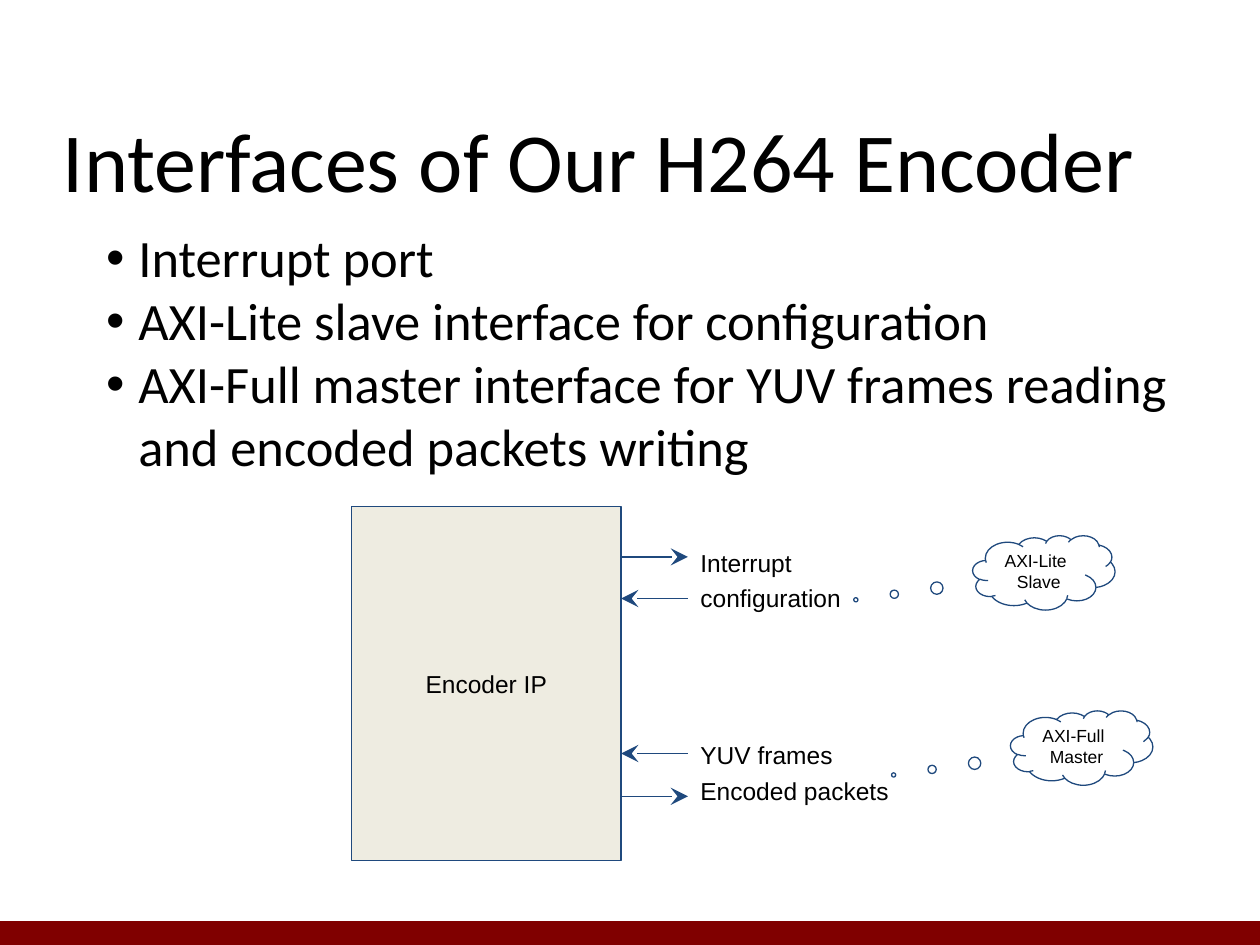
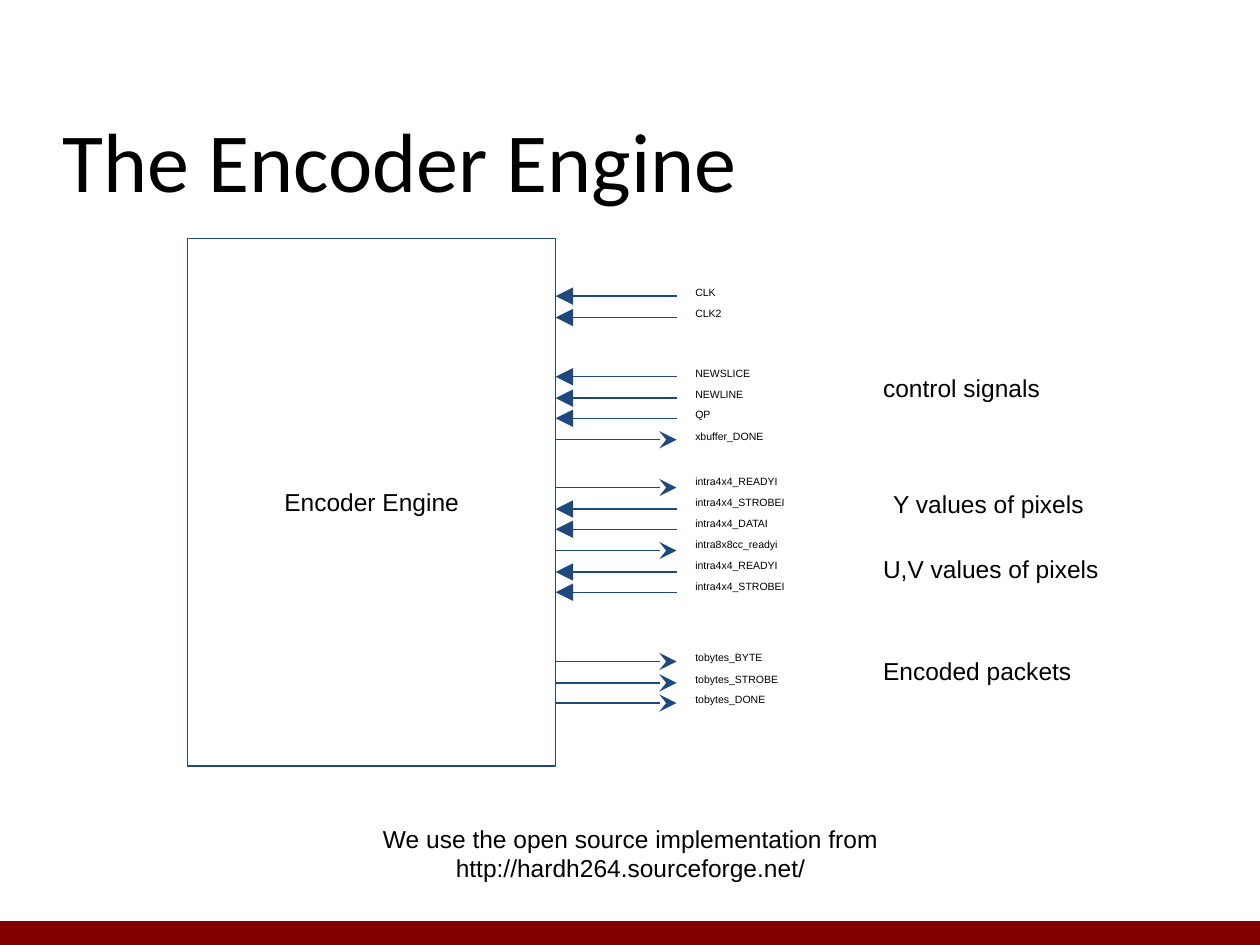
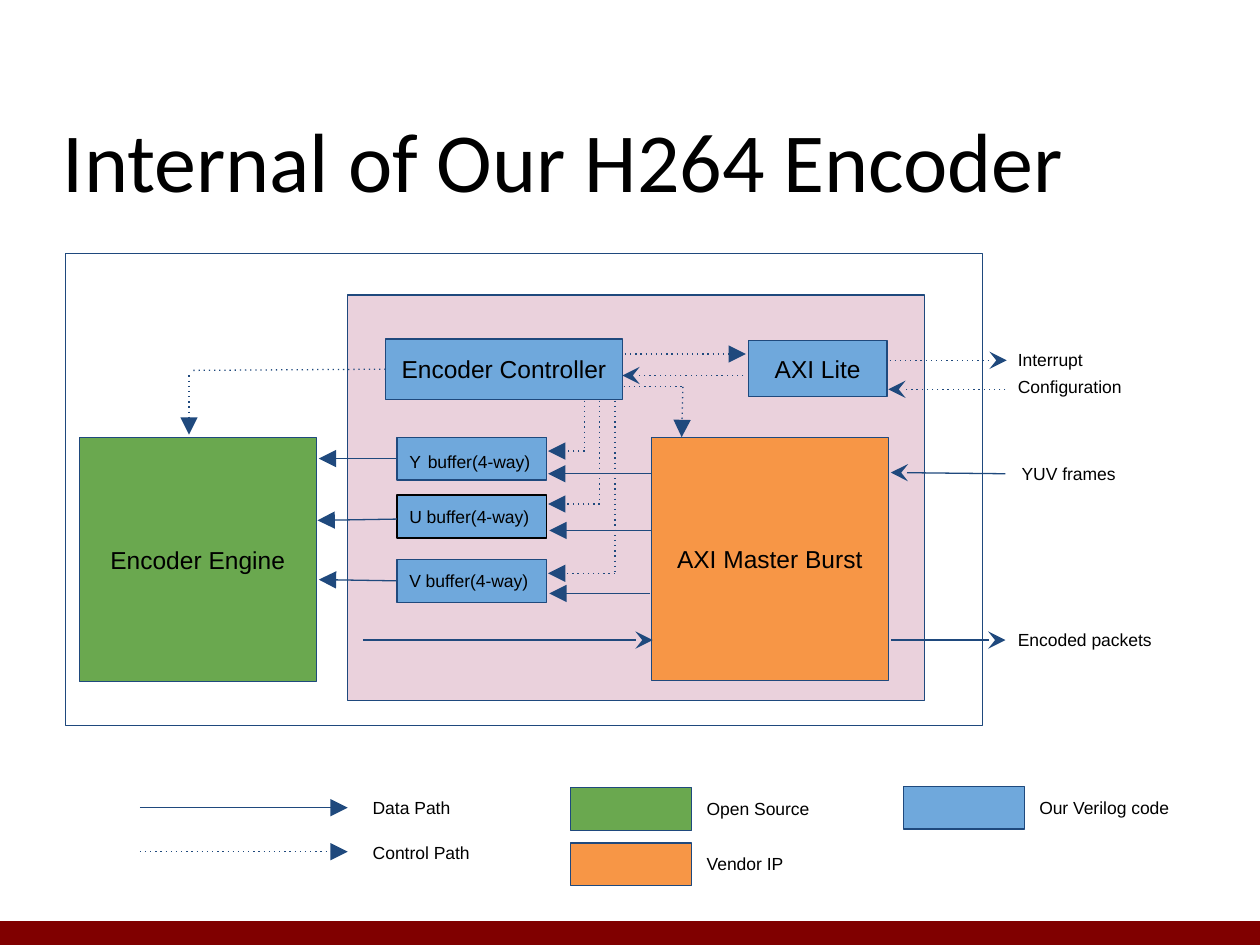
from lxml.etree import SubElement
from pptx import Presentation
from pptx.dml.color import RGBColor
from pptx.enum.shapes import MSO_CONNECTOR, MSO_SHAPE
from pptx.enum.text import MSO_ANCHOR, PP_ALIGN
from pptx.oxml.ns import qn
from pptx.util import Pt

RECT, CLOUD = MSO_SHAPE.RECTANGLE, MSO_SHAPE.CLOUD_CALLOUT
STRAIGHT = MSO_CONNECTOR.STRAIGHT
TOP, MIDDLE = MSO_ANCHOR.TOP, MSO_ANCHOR.MIDDLE
LEFT, CENTER = PP_ALIGN.LEFT, PP_ALIGN.CENTER
OPEN, SOLID = "stealth", "triangle"
PX = 9144
HUES = {
    "band": "800000", "text": "000000", "line": "1F497D", "paper": "FFFFFF",
    "sand": "EEECE1", "pink": "EAD1DC", "blue": "6FA8DC", "green": "6AA84F",
    "orange": "F79646",
}


def hue(name):
    """Return the colour called name."""
    return RGBColor.from_string(HUES[name])


class Deck:
    """Holds the style and the current slide."""

    def __init__(self):
        """Start an empty deck."""
        self.prs = Presentation()
        self.prs.slide_width, self.prs.slide_height = 1000 * PX, 750 * PX
        self.slide = None

    def page(self, title):
        """Add a slide with its band and title."""
        self.slide = self.prs.slides.add_slide(self.prs.slide_layouts[6])
        self.box(0, 731, 1000, 19, "band", edge=None)
        self.label(50, 86, 900, 73, title, 48, "Calibri", pad=(0, 0))

    def style(self, shape, size, face="Arial", align=LEFT, anchor=TOP, pad=(10, 10)):
        """Style the text of a shape."""
        frame = shape.text_frame
        frame.word_wrap = True
        frame.vertical_anchor = anchor
        frame.margin_left = frame.margin_right = pad[0] * PX
        frame.margin_top = frame.margin_bottom = pad[1] * PX
        for para in frame.paragraphs:
            para.alignment = align
            para.font.size = Pt(size)
            para.font.name = face
            para.font.color.rgb = hue("text")

    def label(self, x, y, w, h, text, size, face="Arial", align=LEFT, pad=(10, 10)):
        """Add a text box."""
        shape = self.slide.shapes.add_textbox(x * PX, y * PX, w * PX, h * PX)
        shape.text_frame.text = text
        self.style(shape, size, face, align, TOP, pad)

    def bullets(self, x, y, w, h, items, size):
        """Add a bullet list."""
        shape = self.slide.shapes.add_textbox(x * PX, y * PX, w * PX, h * PX)
        shape.text_frame.text = "\n".join(items)
        for para in shape.text_frame.paragraphs:
            props = para._p.get_or_add_pPr()
            props.set("marL", str(50 * PX))
            props.set("indent", str(-25 * PX))
            tint = SubElement(props, qn("a:buClr"))
            SubElement(tint, qn("a:srgbClr"), val=HUES["text"])
            SubElement(props, qn("a:buFont"), typeface="Arial")
            SubElement(props, qn("a:buChar"), char="•")
        self.style(shape, size, "Calibri", pad=(10, 5))

    def box(self, x, y, w, h, fill, text="", size=14, align=CENTER, edge="line", kind=RECT):
        """Add a filled shape with text in its middle."""
        shape = self.slide.shapes.add_shape(kind, x * PX, y * PX, w * PX, h * PX)
        shape.shadow.inherit = False
        shape.fill.solid()
        shape.fill.fore_color.rgb = hue(fill)
        if edge:
            shape.line.color.rgb = hue(edge)
            shape.line.width = Pt(0.75)
        else:
            shape.line.fill.background()
        if text:
            shape.text_frame.text = text
            self.style(shape, size, align=align, anchor=MIDDLE)
        return shape

    def cloud(self, x, y, text):
        """Add a thought cloud that points to its left."""
        shape = self.box(x, y, 113, 59, "paper", text, 10, kind=CLOUD)
        shape.adjustments[0], shape.adjustments[1] = -1.321, 0.365
        shape.text_frame.paragraphs[0].alignment = LEFT

    def link(self, x1, y1, x2, y2, tip=None, dots=False):
        """Add a line, with an arrow tip at its end if given."""
        line = self.slide.shapes.add_connector(STRAIGHT, x1 * PX, y1 * PX, x2 * PX, y2 * PX)
        line.line.color.rgb = hue("line")
        line.line.width = Pt(0.75)
        props = line._element.spPr
        stroke = props.find(qn("a:ln"))
        if dots:
            SubElement(stroke, qn("a:prstDash"), val="dot")
        if tip:
            SubElement(stroke, qn("a:tailEnd"), type=tip, w="lg", len="lg")
        SubElement(props, qn("a:effectLst"))


def ports(deck):
    """Build the slide on the outer ports."""
    deck.page("Interfaces of Our H264 Encoder")
    deck.bullets(50, 174, 900, 206, [
        "Interrupt port",
        "AXI-Lite slave interface for configuration",
        "AXI-Full master interface for YUV frames reading and encoded packets writing",
    ], 30)
    deck.box(279, 402, 214, 281, "sand", "Encoder IP")
    for y, top, wide, out, name in [
        (442, 425, 142, True, "Interrupt"),
        (475, 453, 142, False, "configuration"),
        (598, 577, 142, False, "YUV frames"),
        (632, 606, 175, True, "Encoded packets"),
    ]:
        start, end = (493, 546) if out else (546, 493)
        deck.link(start, y, end, y, OPEN)
        deck.label(546, top, wide, 34, name, 14)
    deck.cloud(772, 425, "AXI-Lite\nSlave")
    deck.cloud(802, 564, "AXI-Full\nMaster")


def engine(deck):
    """Build the slide on the engine pins."""
    deck.page("The Encoder Engine")
    deck.box(149, 189, 292, 419, "paper", "Encoder Engine")
    for top, lift, pins in [
        (235, 13, [("CLK", 47, False), ("CLK2", 72, False)]),
        (299, 13, [("NEWSLICE", 90, False), ("NEWLINE", 90, False),
                   ("QP", 101, False), ("xbuffer_DONE", 134, True)]),
        (387, 15, [("intra4x4_READYI", 134, True), ("intra4x4_STROBEI", 124, False),
                   ("intra4x4_DATAI", 111, False), ("intra8x8cc_readyi", 120, True),
                   ("intra4x4_READYI", 128, False), ("intra4x4_STROBEI", 145, False)]),
        (525, 13, [("tobytes_BYTE", 128, True), ("tobytes_STROBE", 128, True),
                   ("tobytes_DONE", 132, True)]),
    ]:
        for i, (name, wide, out) in enumerate(pins):
            y = top + round(i * 50 / 3)
            if out:
                deck.link(441, y, 537, y, OPEN)
            else:
                deck.link(537, y, 441, y, SOLID)
            deck.label(542, y - lift, wide, 26, name, 6)
    for x, y, wide, name in [
        (691, 286, 182, "control signals"),
        (699, 378, 182, "Y values of pixels"),
        (691, 430, 198, "U,V values of pixels"),
        (691, 511, 198, "Encoded packets"),
    ]:
        deck.label(x, y, wide, 48, name, 14)
    note = "We use the open source implementation from\nhttp://hardh264.sourceforge.net/"
    deck.label(247, 644, 507, 65, note, 14, align=CENTER)


def inside(deck):
    """Build the slide on the inner blocks and their key."""
    deck.page("Internal of Our H264 Encoder")
    for block in [
        (52, 201, 728, 375, "paper"),
        (276, 234, 458, 322, "pink"),
        (594, 270, 110, 45, "blue", "AXI Lite"),
        (517, 347, 188, 193, "orange", "AXI Master Burst"),
        (63, 347, 188, 194, "green", "Encoder Engine"),
        (306, 269, 188, 48, "blue", "Encoder Controller"),
        (453, 625, 96, 34, "green"),
        (453, 669, 96, 34, "orange"),
        (717, 624, 96, 34, "blue"),
    ]:
        deck.box(*block)
    first = deck.box(315, 347, 119, 34, "blue", "Y", 10, LEFT)
    para = first.text_frame.paragraphs[0]
    gap = para.add_run()
    gap.text = " "
    gap.font.size = Pt(14)
    para.add_run().text = "buffer(4-way)"
    deck.box(315, 393, 119, 34, "blue", "U buffer(4-way)", 10, LEFT, "text")
    deck.box(315, 444, 119, 34, "blue", "V buffer(4-way)", 10, LEFT)

    for ends in [
        (798, 376, 707, 375, OPEN),
        (707, 508, 798, 508, OPEN),
        (288, 508, 518, 508, OPEN),
        (315, 364, 253, 364, SOLID),
        (315, 412, 252, 413, SOLID),
        (315, 461, 253, 460, SOLID),
        (517, 376, 435, 376, SOLID),
        (517, 421, 436, 421, SOLID),
        (516, 471, 436, 471, SOLID),
        (111, 641, 276, 641, SOLID),
    ]:
        deck.link(*ends)
    for ends in [
        (798, 309, 705, 309, OPEN),
        (706, 286, 799, 286, OPEN),
        (590, 298, 494, 298, OPEN),
        (496, 281, 592, 281, SOLID),
        (306, 293, 151, 294),
        (150, 298, 150, 345, SOLID),
        (495, 307, 542, 307),
        (542, 307, 541, 347, SOLID),
        (111, 676, 276, 676, SOLID),
    ]:
        deck.link(*ends, dots=True)
    for x, y in [(464, 358), (476, 400), (488, 455)]:
        deck.link(x, 318, x, y, dots=True)
        deck.link(x, y, 435, y, SOLID, True)

    for x, y, wide, name in [
        (798, 269, 147, "Interrupt"),
        (798, 290, 147, "Configuration"),
        (801, 359, 147, "YUV frames"),
        (798, 491, 147, "Encoded packets"),
        (286, 624, 86, "Data Path"),
        (286, 660, 102, "Control Path"),
        (551, 625, 119, "Open Source"),
        (551, 669, 119, "Vendor IP"),
        (815, 624, 133, "Our Verilog code"),
    ]:
        deck.label(x, y, wide, 34, name, 10)


def main():
    """Build and save the deck."""
    deck = Deck()
    ports(deck)
    engine(deck)
    inside(deck)
    deck.prs.save("out.pptx")


if __name__ == "__main__":
    main()
